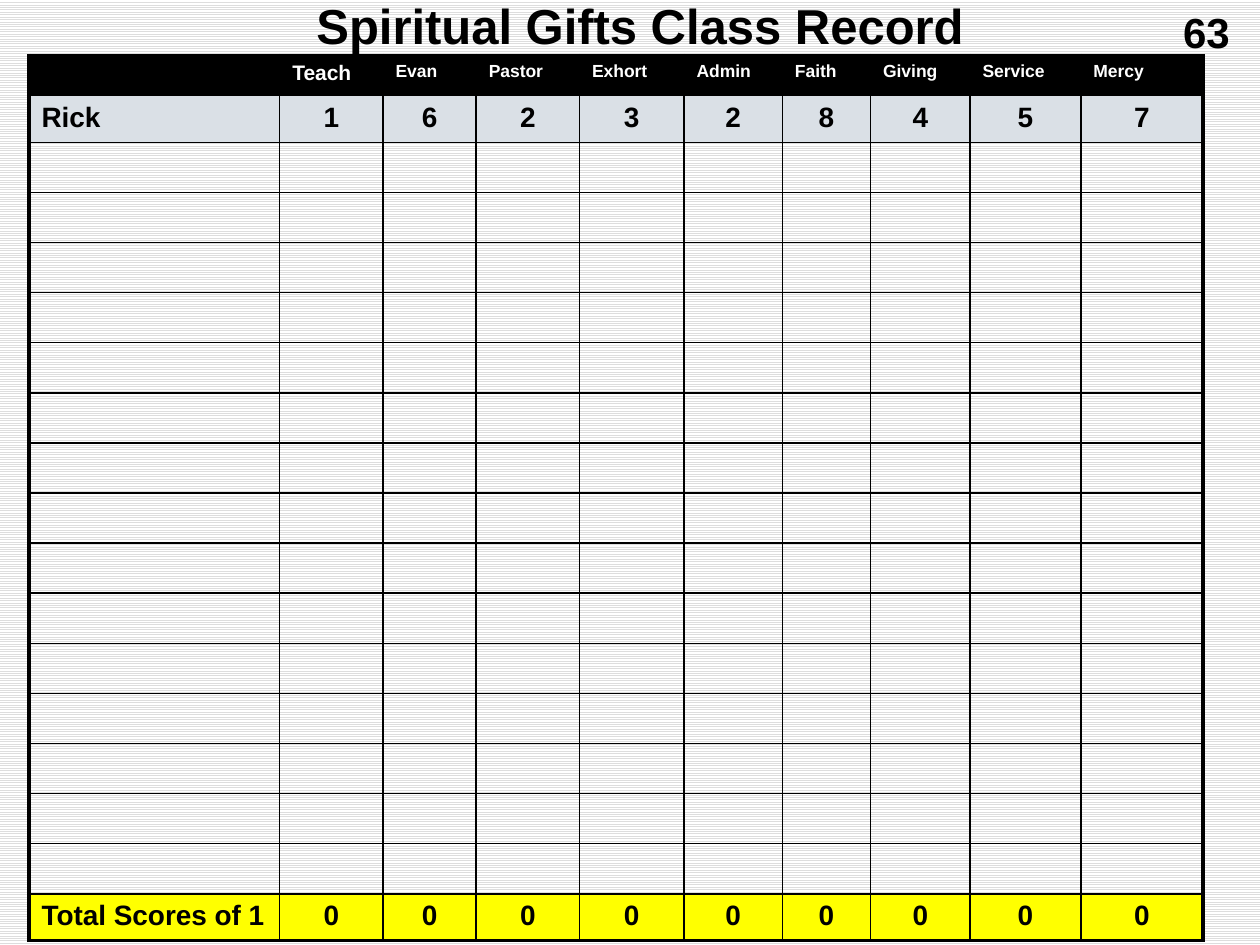
from lxml.etree import SubElement
from pptx import Presentation
from pptx.dml.color import RGBColor
from pptx.enum.dml import MSO_PATTERN
from pptx.enum.text import MSO_ANCHOR as Anchor, PP_ALIGN as Align
from pptx.oxml.ns import qn
from pptx.util import Inches, Pt

BLACK = RGBColor(0x00, 0x00, 0x00)
WHITE = RGBColor(0xFF, 0xFF, 0xFF)
STRIPE = RGBColor(0xDD, 0xDD, 0xDD)
PALE_BLUE = RGBColor(0xDA, 0xE0, 0xE6)
YELLOW = RGBColor(0xFF, 0xFF, 0x00)

FONT = "Arial"
GRID_COLS, GRID_ROWS = 100, 75
UNIT = Inches(0.1)

TITLE_BOX = (0.8, -2.7, 100, 7.5)
NUMBER_BOX = (91.6, 0, 8.3, 5)
TABLE_BOX = (2.3, 4.4, 93.3, 70.3)

COL_WIDTHS = [19.9, 8.2, 7.4, 8.2, 8.3, 7.8, 7, 7.9, 8.8, 9.7]
HEADER_HEIGHT, SCORE_HEIGHT = 3.2, 3.7
EMPTY_ROWS = 15
THIN, THICK = Pt(1), Pt(2.25)

GIFTS = ["Teach", "Evan", "Pastor", "Exhort", "Admin", "Faith", "Giving", "Service", "Mercy"]
SCORES = ["1", "6", "2", "3", "2", "8", "4", "5", "7"]
HEADER = [""] + GIFTS
RICK = ["Rick"] + SCORES
TOTALS = ["Total Scores of 1"] + ["0"] * len(GIFTS)


def grid(*values):
    return [round(value * UNIT) for value in values]


def write(tf, text, size, color, align=Align.LEFT):
    tf.text = text
    p = tf.paragraphs[0]
    p.alignment = align
    for r in p.runs:
        r.font.name = FONT
        r.font.size = Pt(size)
        r.font.bold = True
        r.font.color.rgb = color
    return p


def space_before(p):
    spacing = SubElement(p._p.get_or_add_pPr(), qn("a:spcBef"))
    SubElement(spacing, qn("a:spcPct"), val="20000")


def add_label(s, box, text, size, anchor):
    tf = s.shapes.add_textbox(*grid(*box)).text_frame
    tf.word_wrap = True
    tf.vertical_anchor = anchor
    return write(tf, text, size, BLACK, Align.CENTER)


def add_page_number(s, box, text):
    p = add_label(s, box, text, 24, Anchor.TOP)
    space_before(p)
    indent = Inches(0.38)
    pPr = p._p.get_or_add_pPr()
    pPr.set("marL", str(indent))
    pPr.set("indent", str(-indent))


def set_borders(cell, widths):
    tcPr = cell._tc.get_or_add_tcPr()
    for side in ("L", "R", "T", "B"):
        ln = SubElement(tcPr, qn(f"a:ln{side}"), w=str(widths[side]))
        fill = SubElement(ln, qn("a:solidFill"))
        SubElement(fill, qn("a:srgbClr"), val=str(BLACK))


def fill_cell(cell, text, size, color, align, fill):
    p = write(cell.text_frame, text, size, color, align)
    if text:
        space_before(p)
    else:
        SubElement(p._p, qn("a:endParaRPr"), sz=str(size * 100))
    if fill is None:
        cell.fill.background()
    else:
        cell.fill.solid()
        cell.fill.fore_color.rgb = fill


def add_record(s, box):
    empty = [""] * len(COL_WIDTHS)
    rows = [(HEADER, PALE_BLUE), (RICK, PALE_BLUE)]
    rows = [(HEADER, BLACK), (RICK, PALE_BLUE)] + [(empty, None)] * EMPTY_ROWS + [(TOTALS, YELLOW)]
    empty_height = (box[3] - HEADER_HEIGHT - 2 * SCORE_HEIGHT) / EMPTY_ROWS
    heights = [HEADER_HEIGHT, SCORE_HEIGHT] + [empty_height] * EMPTY_ROWS + [SCORE_HEIGHT]
    last_row, last_col = len(rows) - 1, len(COL_WIDTHS) - 1

    table = s.shapes.add_table(len(rows), len(COL_WIDTHS), *grid(*box)).table
    table.first_row = False
    table.horz_banding = False
    for column, width in zip(table.columns, grid(*COL_WIDTHS)):
        column.width = width
    for row, height in zip(table.rows, grid(*heights)):
        row.height = height

    for i, (texts, fill) in enumerate(rows):
        for j, text in enumerate(texts):
            cell = table.cell(i, j)
            set_borders(cell, {
                "L": THICK if j == 0 else THIN,
                "R": THICK if j == last_col else THIN,
                "T": THICK if i == 0 else THIN,
                "B": THICK if i == last_row else THIN,
            })
            if i == 0:
                size = 12 if j == 1 else 10
                fill_cell(cell, text, size, WHITE, Align.LEFT, fill)
            else:
                align = Align.LEFT if j == 0 else Align.CENTER
                fill_cell(cell, text, 16, BLACK, align, fill)


def set_background(s):
    fill = s.background.fill
    fill.patterned()
    fill.pattern = MSO_PATTERN.LIGHT_HORIZONTAL
    fill.fore_color.rgb = STRIPE
    fill.back_color.rgb = WHITE


def main():
    prs = Presentation()
    prs.slide_width, prs.slide_height = grid(GRID_COLS, GRID_ROWS)
    s = prs.slides.add_slide(prs.slide_layouts[6])
    set_background(s)
    add_label(s, TITLE_BOX, "Spiritual Gifts Class Record", 28, Anchor.BOTTOM)
    add_page_number(s, NUMBER_BOX, "63")
    add_record(s, TABLE_BOX)
    prs.save("out.pptx")


if __name__ == "__main__":
    main()
